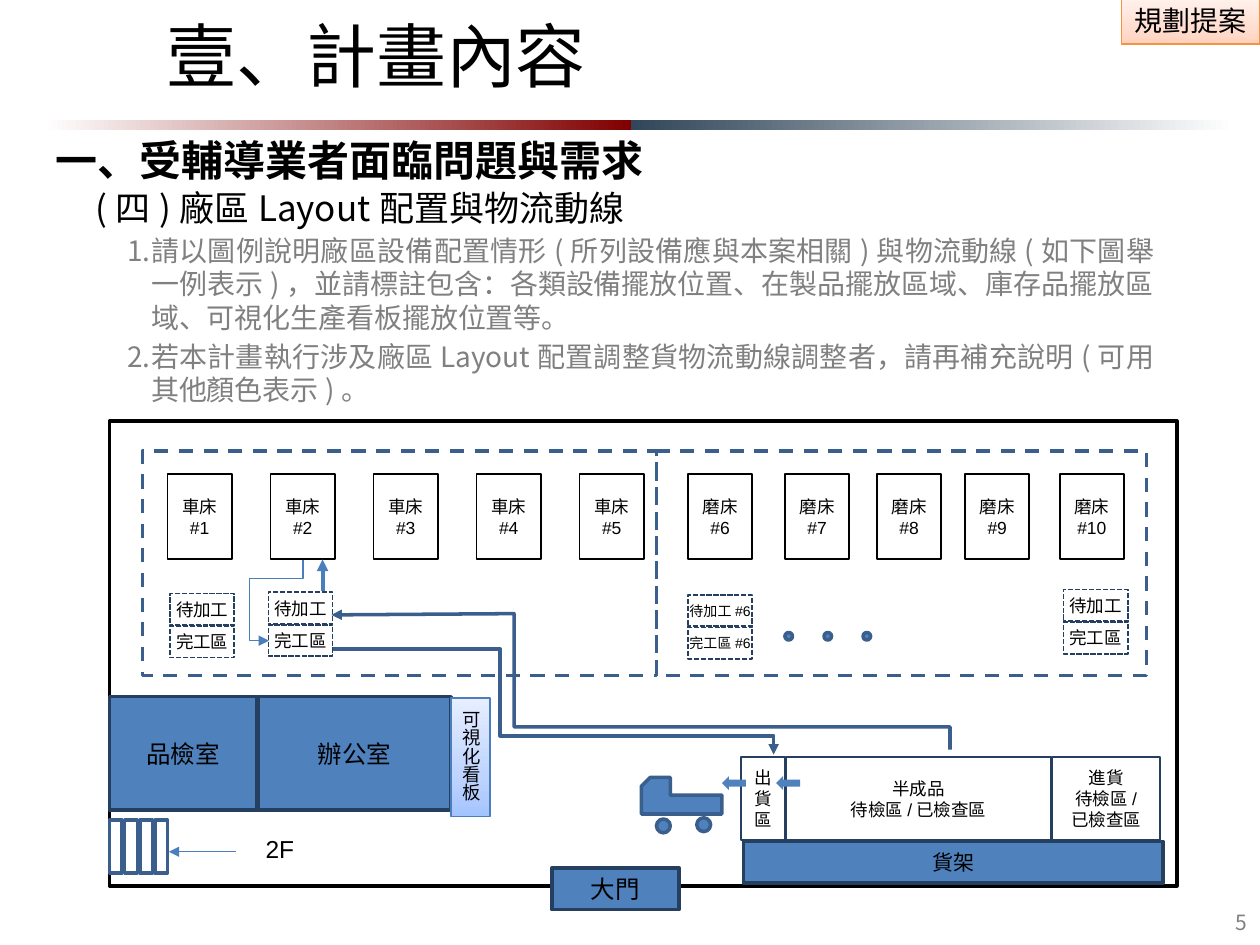
from itertools import groupby

from lxml import etree
from pptx import Presentation
from pptx.dml.color import RGBColor
from pptx.enum.dml import MSO_LINE_DASH_STYLE as DASH
from pptx.enum.shapes import MSO_CONNECTOR as LINK, MSO_SHAPE as SHAPE
from pptx.enum.text import MSO_ANCHOR as ANCHOR, MSO_AUTO_SIZE as FIT, PP_ALIGN as ALIGN
from pptx.oxml.ns import qn
from pptx.util import Inches, Pt

# Colours and fonts
BLACK, WHITE = RGBColor(0, 0, 0), RGBColor(255, 255, 255)
GRAY, PAGE_GRAY = RGBColor(0x80, 0x80, 0x80), RGBColor(0x7F, 0x7F, 0x7F)
BLUE, NAVY = RGBColor(0x4F, 0x81, 0xBD), RGBColor(0x24, 0x3F, 0x60)
STEEL, ARROW_BLUE = RGBColor(0x3A, 0x5F, 0x8C), RGBColor(0x4B, 0x7E, 0xBC)
ORANGE = RGBColor(0xF6, 0x92, 0x40)
SANS, SERIF, LATIN = "Noto Sans CJK SC", "Times New Roman", "Arial"

# Content
TITLE = "壹、計畫內容"
TAG = "規劃提案"
HEADING = "一、受輔導業者面臨問題與需求"
SUBHEADING = "(四)廠區Layout配置與物流動線"
NOTES = [
    "請以圖例說明廠區設備配置情形(所列設備應與本案相關)與物流動線(如下圖舉一例表示)，"
    "並請標註包含：各類設備擺放位置、在製品擺放區域、庫存品擺放區域、可視化生產看板擺放位置等。",
    "若本計畫執行涉及廠區Layout配置調整貨物流動線調整者，請再補充說明(可用其他顏色表示)。",
]
LATHE_LEFT, LATHE_STEP = 1.33, 0.8175
MACHINES = [("車床", LATHE_LEFT + i * LATHE_STEP) for i in range(5)]
MACHINES += [("磨床", left) for left in (5.46, 6.23, 6.96, 7.66, 8.41)]
ROOMS = [  # text, box, size
    ("辦公室", (2.05, 5.53, 1.53, 0.9), 14),
    ("品檢室", (0.87, 5.53, 1.17, 0.9), 14),
    ("大門", (4.38, 6.89, 1.01, 0.33), 14),
    ("貨架", (5.9, 6.68, 3.33, 0.33), 12),
]
STORES = [  # paragraphs, left, width
    (["出貨區"], 5.88, 0.35),
    (["半成品", "待檢區/已檢查區"], 6.24, 2.1),
    (["進貨", "待檢區/", "已檢查區"], 8.35, 0.86),
]
TRAYS = [  # left, top, label suffix, size
    (1.35, 4.71, "", 10), (2.13, 4.7, "", 10), (5.46, 4.72, "#6", 8), (8.44, 4.68, "", 10),
]
INBOUND = [(7.54, 5.95), (7.54, 5.77), (4.08, 5.77), (4.08, 4.87), (2.63, 4.88)]
OUTBOUND = [(2.64, 5.15), (3.97, 5.15), (3.97, 5.84), (6.14, 5.84), (6.14, 5.99)]
TRUCK = [(5.73, 6.46), (5.09, 6.46), (5.09, 6.24), (5.16, 6.17),
         (5.32, 6.17), (5.32, 6.31), (5.73, 6.31)]

presentation = Presentation()
presentation.slide_width, presentation.slide_height = Inches(10), Inches(7.5)
slide = presentation.slides.add_slide(presentation.slide_layouts[1])
shapes = slide.shapes


def write(shape, paragraphs, size=10, font=None, color=BLACK, bold=False, align=ALIGN.CENTER,
          anchor=ANCHOR.MIDDLE, inset=None, wrap=True, before=0, indents=None, numbered=False):
    """Fill a shape with text; without a font, Latin and Chinese parts get their own."""
    frame = shape.text_frame
    frame.auto_size, frame.word_wrap, frame.vertical_anchor = FIT.NONE, wrap, anchor
    if inset is not None:
        frame.margin_left = frame.margin_right = Inches(inset)
        frame.margin_top = frame.margin_bottom = Inches(inset)
    for index, text in enumerate(paragraphs):
        paragraph = frame.paragraphs[0] if index == 0 else frame.add_paragraph()
        paragraph.alignment = align
        paragraph.line_spacing = Pt(1.2 * size)
        paragraph.space_before = Pt(before if index else 0)
        if indents:
            properties = paragraph._p.get_or_add_pPr()
            properties.set("marL", str(Inches(indents[0])))
            properties.set("indent", str(Inches(indents[1])))
            if numbered:
                etree.SubElement(properties, qn("a:buAutoNum"), type="arabicPeriod")
        parts = [(font, text)] if font else [
            (LATIN if ascii_part else SERIF, "".join(letters))
            for ascii_part, letters in groupby(text, str.isascii)]
        for name, part in parts:
            run = paragraph.add_run()
            run.text = part
            run.font.size, run.font.name, run.font.bold = Pt(size), name, bold
            run.font.color.rgb = color
            etree.SubElement(run._r.get_or_add_rPr(), qn("a:ea"), typeface=SANS)


def style(shape, fill=None, line=None, width=1, dash=None):
    shape.shadow.inherit = False
    if fill is None:
        shape.fill.background()
    else:
        shape.fill.solid()
        shape.fill.fore_color.rgb = fill
    if line is None:
        shape.line.fill.background()
    else:
        shape.line.color.rgb, shape.line.width = line, Pt(width)
        if dash:
            shape.line.dash_style = dash
    return shape


def add_box(box, kind=SHAPE.RECTANGLE, **look):
    return style(shapes.add_shape(kind, *map(Inches, box)), **look)


def add_gradient_box(box, stops, angle, **look):
    shape = add_box(box, **look)
    gradient = etree.Element(qn("a:gradFill"), rotWithShape="1")
    stop_list = etree.SubElement(gradient, qn("a:gsLst"))
    for position, color in stops:
        stop = etree.SubElement(stop_list, qn("a:gs"), pos=str(position * 1000))
        etree.SubElement(stop, qn("a:srgbClr"), val=color)
    etree.SubElement(gradient, qn("a:lin"), ang=str(angle * 60000), scaled="0")
    properties = shape.element.spPr
    properties.replace(properties.find(qn("a:noFill")), gradient)
    return shape


def add_arrowhead(shape):
    etree.SubElement(shape.element.spPr.find(qn("a:ln")), qn("a:tailEnd"), type="triangle")


def add_arrow(start, end, width, kind=LINK.STRAIGHT):
    arrow = shapes.add_connector(kind, *map(Inches, start + end))
    arrow.line.color.rgb, arrow.line.width = ARROW_BLUE, Pt(width)
    add_arrowhead(arrow)
    etree.SubElement(arrow.element.spPr, qn("a:effectLst"))
    return arrow


def add_outline(points, close=False, **look):
    hundredths = [(x * 100, y * 100) for x, y in points]
    builder = shapes.build_freeform(*hundredths[0], scale=Inches(0.01))
    builder.add_line_segments(hundredths[1:], close=close)
    return style(builder.convert_to_shape(), line=STEEL, width=2, **look)


def place(shape, box):
    shape.left, shape.top, shape.width, shape.height = map(Inches, box)
    return shape


# Tag, title rule and page number
tag = add_gradient_box((8.9, -0.02, 1.1, 0.37), [(0, "FFD2BD"), (35, "FFDED0"), (100, "FFF2ED")],
                       270, line=ORANGE, width=0.75)
write(tag, [TAG], size=16, font=SANS, wrap=False)
add_gradient_box((0.35, 0.95, 4.66, 0.08), [(0, "FFFFFF"), (100, "800000")], 0)
add_gradient_box((5.01, 0.95, 4.78, 0.08), [(0, "314659"), (100, "FFFFFF")], 0)
page_number = shapes.add_textbox(*map(Inches, (9.25, 7.16, 0.75, 0.32)))
write(page_number, ["5"], size=12, font=SANS, color=PAGE_GRAY, align=ALIGN.RIGHT)

# Title, headings and numbered notes
write(place(shapes.title, (1.22, 0.05, 6.69, 0.68)), [TITLE], size=40, font=SANS,
      align=ALIGN.LEFT, anchor=ANCHOR.TOP)
for text, top, height, size, indent in ((HEADING, 1.02, 0.5, 24, 0.08),
                                        (SUBHEADING, 1.43, 0.43, 20, 0.4)):
    write(shapes.add_textbox(*map(Inches, (0.26, top, 6.69, height))), [text], size=size,
          font=SANS, bold=size == 24, align=ALIGN.LEFT, anchor=ANCHOR.TOP, indents=(indent, 0))
write(place(slide.placeholders[1], (0.91, 1.8, 8.35, 1.49)), NOTES, size=16, font=SANS,
      color=GRAY, align=ALIGN.JUSTIFY, anchor=ANCHOR.TOP, before=3,
      indents=(0.19, -0.19), numbered=True)

# Factory walls, work zones, rooms and stairs
add_box((0.87, 3.34, 8.47, 3.69), line=BLACK, width=2)
for left, width in ((1.13, 4.08), (5.21, 3.89)):
    add_box((left, 3.58, width, 1.78), line=STEEL, width=2, dash=DASH.DASH)
for text, box, size in ROOMS:
    write(add_box(box, fill=BLUE, line=NAVY, width=2), [text], size=size)
for step in range(4):
    add_box((0.87 + 0.12 * step, 6.51, 0.1, 0.42), line=STEEL, width=2)
add_arrow((1.87, 6.76), (1.34, 6.76), 0.75)
write(add_box((2.01, 6.57, 0.53, 0.43), fill=WHITE), ["2F"], size=14,
      align=ALIGN.LEFT, anchor=ANCHOR.TOP)

# Machines, trays and stores
for number, (name, left) in enumerate(MACHINES, 1):
    write(add_box((left, 3.76, 0.51, 0.68), line=BLACK), [name, f"#{number}"])
for left, top, suffix, size in TRAYS:
    for row, label in enumerate(("待加工", "完工區")):
        tray = add_box((left, top + 0.25 * row, 0.51, 0.26), line=NAVY, dash=DASH.SQUARE_DOT)
        write(tray, [label + suffix], size=size, inset=0)
for paragraphs, left, width in STORES:
    write(add_box((left, 6.01, width, 0.66), fill=WHITE, line=NAVY), paragraphs)
for left in (6.23, 6.54, 6.85):
    add_box((left, 5.02, 0.06, 0.06), SHAPE.OVAL, fill=BLUE, line=STEEL, width=2)

# Material flow
for route in (INBOUND, OUTBOUND):
    add_arrowhead(add_outline(route))
add_arrow((2.56, 4.69), (2.56, 4.44), 2.25)
return_path = add_arrow((1.95, 4.63), (2.59, 4.9), 0.75, LINK.ELBOW)
return_path.element.spPr.find(qn("a:xfrm")).set("rot", str(90 * 60000))
geometry = return_path.element.spPr.find(qn("a:prstGeom"))
geometry.set("prst", "bentConnector4")
for name, value in (("adj1", 23100), ("adj2", 157200)):
    etree.SubElement(geometry.find(qn("a:avLst")), qn("a:gd"), name=name, fmla=f"val {value}")

# Truck and loading arrows
for left, top in ((5.21, 6.5), (5.53, 6.49)):
    add_box((left, top, 0.11, 0.11), SHAPE.OVAL, fill=BLUE, line=STEEL, width=2)
add_outline(TRUCK, close=True, fill=BLUE)
for left in (6.16, 5.73):
    add_box((left, 6.16, 0.19, 0.11), SHAPE.LEFT_ARROW, fill=BLUE)

# Visual board
board = add_gradient_box((3.58, 5.54, 0.31, 0.94), [(0, "A4C4FF"), (35, "BFD4FF"), (100, "E6EEFF")],
                         270, line=ARROW_BLUE, width=0.75)
write(board, ["可視化看板"], size=10.5, font=SANS)
board.text_frame._txBody.bodyPr.set("vert", "eaVert")

presentation.save("out.pptx")
